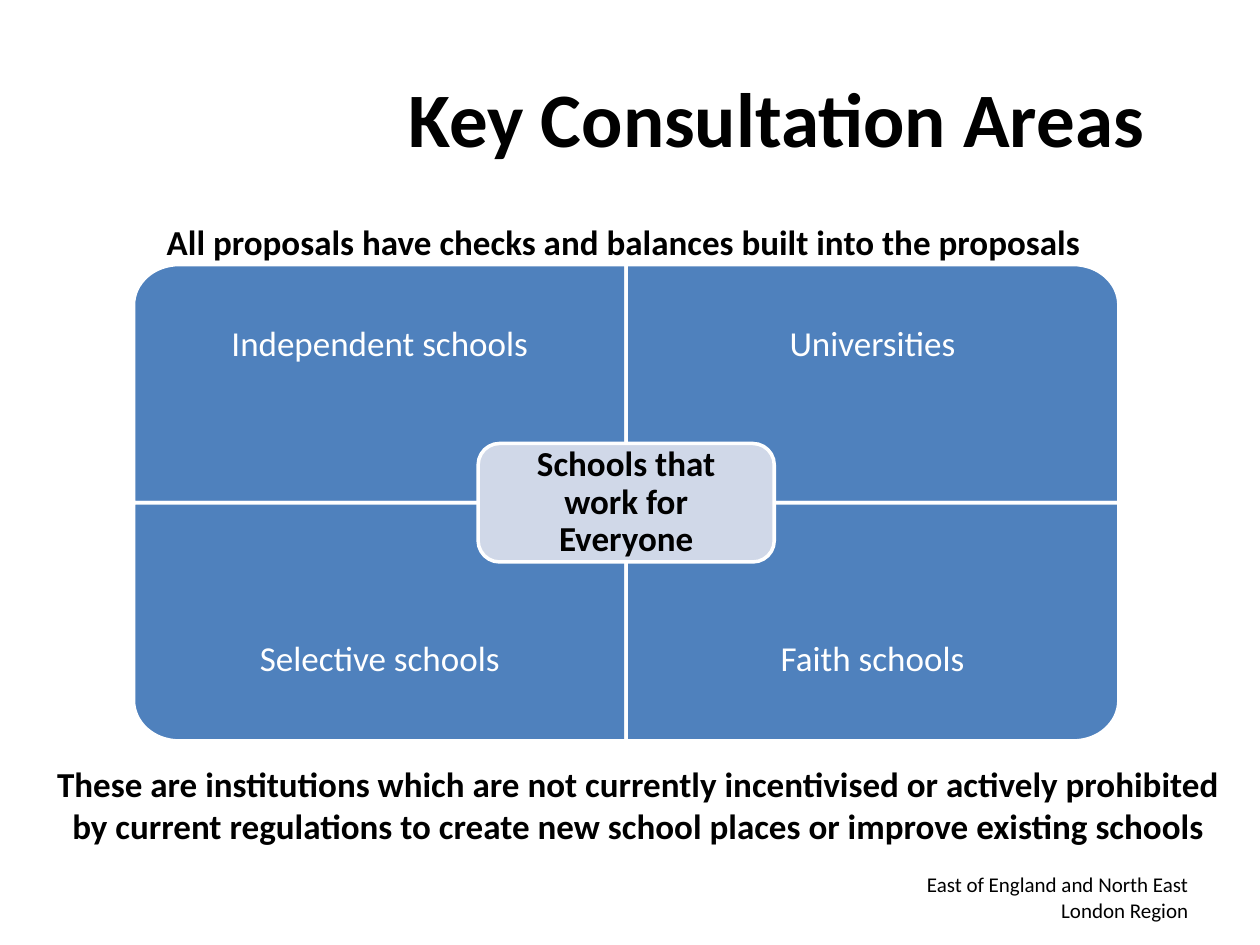
from dataclasses import dataclass
from math import cos, pi, sin

from pptx import Presentation
from pptx.dml.color import RGBColor
from pptx.enum.shapes import MSO_SHAPE
from pptx.enum.text import MSO_ANCHOR, PP_ALIGN
from pptx.util import Inches, Pt


@dataclass(frozen=True)
class Theme:
    font: str = "Calibri"
    ink: RGBColor = RGBColor(0x00, 0x00, 0x00)
    white: RGBColor = RGBColor(0xFF, 0xFF, 0xFF)
    quadrant: RGBColor = RGBColor(0x4F, 0x81, 0xBD)
    hub: RGBColor = RGBColor(0xD0, 0xD8, 0xE8)
    title_size: Pt = Pt(44)
    body_size: Pt = Pt(20)
    footer_size: Pt = Pt(12)
    outline: Pt = Pt(2)


class SlideBuilder:
    def __init__(self, slide, theme):
        self.shapes = slide.shapes
        self.theme = theme

    def set_text(self, shape, wording, size, color, bold=False,
                 align=PP_ALIGN.CENTER, anchor=MSO_ANCHOR.MIDDLE, spacing=None):
        frame = shape.text_frame
        frame.word_wrap = True
        frame.vertical_anchor = anchor
        paragraph = frame.paragraphs[0]
        paragraph.text = wording
        paragraph.alignment = align
        paragraph.line_spacing = spacing
        font = paragraph.font
        font.name, font.size, font.bold = self.theme.font, size, bold
        font.color.rgb = color

    def text(self, wording, left, top, width, height, size, **style):
        box = self.shapes.add_textbox(
            Inches(left), Inches(top), Inches(width), Inches(height))
        self.set_text(box, wording, size, self.theme.ink, **style)

    def paint(self, shape, color):
        shape.shadow.inherit = False
        shape.fill.solid()
        shape.fill.fore_color.rgb = color
        shape.line.color.rgb = self.theme.white
        shape.line.width = self.theme.outline

    def inset(self, shape, side, top, bottom):
        frame = shape.text_frame
        frame.margin_left = frame.margin_right = Inches(side)
        frame.margin_top, frame.margin_bottom = Inches(top), Inches(bottom)

    def quadrant(self, wording, center, size, across, down):
        """Draw a quarter of the matrix; across and down (-1 or 1) point outwards."""
        (center_x, center_y), (width, height) = center, size
        radius_x, radius_y, steps = 0.36, 0.32, 16

        def place(x, y):
            return Inches(center_x + across * x), Inches(center_y + down * y)

        corner = [place(width - radius_x * (1 - cos(angle)),
                        height - radius_y * (1 - sin(angle)))
                  for angle in (step * pi / 2 / steps for step in range(steps + 1))]
        outline = self.shapes.build_freeform(*place(0, 0))
        outline.add_line_segments([place(width, 0), *corner, place(0, height)])
        quarter = outline.convert_to_shape()
        self.paint(quarter, self.theme.quadrant)
        outer, inner = 0.16, 0.77
        top, bottom = (outer, inner) if down < 0 else (inner, outer)
        self.inset(quarter, outer, top, bottom)
        self.set_text(quarter, wording, self.theme.body_size, self.theme.white,
                      spacing=0.9)

    def hub(self, wording, center, size):
        (center_x, center_y), (width, height) = center, size
        hub = self.shapes.add_shape(
            MSO_SHAPE.ROUNDED_RECTANGLE,
            Inches(center_x - width / 2), Inches(center_y - height / 2),
            Inches(width), Inches(height))
        hub.adjustments[0] = 0.18
        self.paint(hub, self.theme.hub)
        self.inset(hub, 0.1, 0.1, 0.1)
        self.set_text(hub, wording, self.theme.body_size, self.theme.ink,
                      bold=True, spacing=0.9)


def main():
    presentation = Presentation()
    presentation.slide_width, presentation.slide_height = Inches(10), Inches(7.5)
    theme = Theme()
    builder = SlideBuilder(
        presentation.slides.add_slide(presentation.slide_layouts[6]), theme)

    builder.text("East of England and North East London Region",
                 7.2, 6.92, 2.33, 0.4, theme.footer_size, align=PP_ALIGN.RIGHT)
    builder.text("Key Consultation Areas",
                 2.83, 0.3, 6.67, 1.25, theme.title_size, bold=True)

    center = (4.97, 3.99)
    areas = {
        "Independent schools": (-1, -1),
        "Universities": (1, -1),
        "Selective schools": (-1, 1),
        "Faith schools": (1, 1),
    }
    for area, (across, down) in areas.items():
        builder.quadrant(area, center, (3.91, 1.89), across, down)
    builder.hub("Schools that work for Everyone", center, (2.35, 0.94))

    builder.text("These are institutions which are not currently incentivised or "
                 "actively prohibited by current regulations to create new school "
                 "places or improve existing schools",
                 0.3, 6, 9.53, 0.77, theme.body_size, bold=True, anchor=MSO_ANCHOR.TOP)
    builder.text("All proposals have checks and balances built into the proposals",
                 1.06, 1.7, 7.78, 0.44, theme.body_size, bold=True,
                 anchor=MSO_ANCHOR.TOP)

    presentation.save("out.pptx")


if __name__ == "__main__":
    main()
